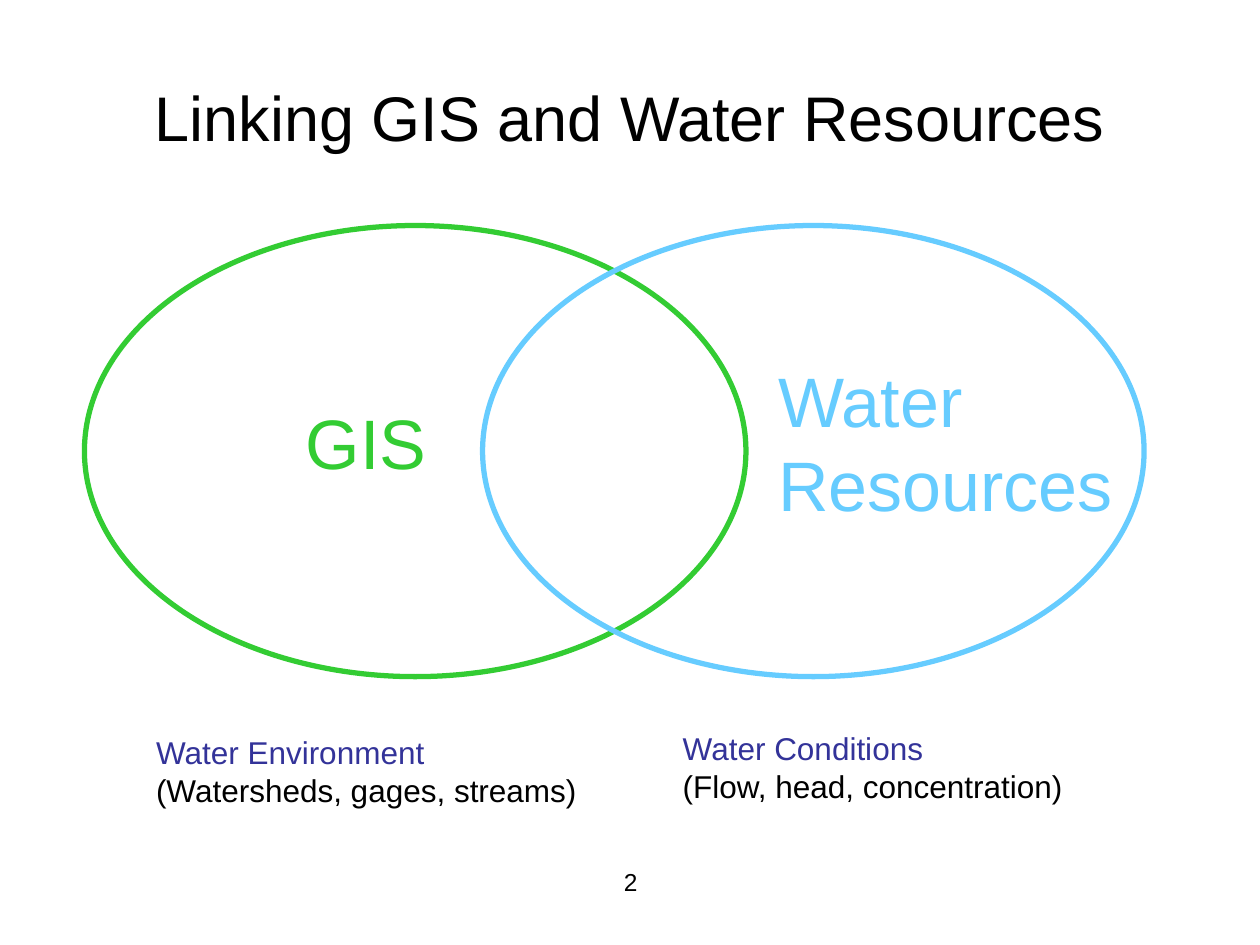
"""Build a slide that shows GIS and water resources as two overlapping ellipses."""
from pptx import Presentation
from pptx.dml.color import RGBColor
from pptx.enum.shapes import MSO_SHAPE as Shape
from pptx.enum.text import MSO_ANCHOR as Anchor, MSO_AUTO_SIZE as AutoSize, PP_ALIGN as Align
from pptx.util import Inches, Pt

BLACK = RGBColor(0x00, 0x00, 0x00)
GREEN = RGBColor(0x33, 0xCC, 0x33)
SKY = RGBColor(0x66, 0xCC, 0xFF)
INDIGO = RGBColor(0x33, 0x33, 0x99)


class SlideBuilder:
    font = "Arial"
    outline = Pt(3)

    def __init__(self, deck):
        self.page = deck.slides.add_slide(deck.slide_layouts[5])

    def add_lines(self, frame, lines, size, align=Align.LEFT):
        for index, (text, color) in enumerate(lines):
            para = frame.paragraphs[0] if index == 0 else frame.add_paragraph()
            para.alignment = align
            span = para.add_run()
            span.text = text
            for name, value in {"name": self.font, "size": Pt(size)}.items():
                setattr(span.font, name, value)
            span.font.color.rgb = color

    def title(self, text, left, top, width, height, size):
        box = self.page.shapes.title
        place = {"left": left, "top": top, "width": width, "height": height}
        for name, value in place.items():
            setattr(box, name, Inches(value))
        box.text_frame.vertical_anchor = Anchor.MIDDLE
        self.add_lines(box.text_frame, [(text, BLACK)], size, Align.CENTER)

    def ellipse(self, left, top, width, height, color):
        oval = self.page.shapes.add_shape(
            Shape.OVAL, Inches(left), Inches(top), Inches(width), Inches(height))
        oval.shadow.inherit = False
        oval.fill.background()
        oval.line.color.rgb = color
        oval.line.width = self.outline

    def text(self, lines, left, top, width, height, size,
             align=Align.LEFT, wrap=False, fit=AutoSize.SHAPE_TO_FIT_TEXT):
        box = self.page.shapes.add_textbox(
            Inches(left), Inches(top), Inches(width), Inches(height))
        for name, value in {"word_wrap": wrap, "auto_size": fit}.items():
            setattr(box.text_frame, name, value)
        self.add_lines(box.text_frame, lines, size, align)


def main():
    deck = Presentation()
    deck.slide_width, deck.slide_height = Inches(10), Inches(7.5)
    slide = SlideBuilder(deck)

    slide.title("Linking GIS and Water Resources", 0.5, 0.3, 9, 1.25, 36)
    for left, color in ((0.67, GREEN), (3.83, SKY)):
        slide.ellipse(left, 1.79, 5.25, 3.58, color)

    slide.text([("GIS", GREEN)], 2.33, 3.12, 1.16, 0.77, 40, wrap=True)
    slide.text([("Water", SKY), ("Resources", SKY)], 6.08, 2.79, 2.86, 2.1, 40)

    captions = (
        ("Water Environment", "(Watersheds, gages, streams)", 1.14, 5.77, 4.13),
        ("Water Conditions", "(Flow, head, concentration)", 5.32, 5.74, 3.81),
    )
    for heading, examples, left, top, width in captions:
        slide.text([(heading, INDIGO), (examples, BLACK)], left, top, width, 0.77, 18)

    slide.text([("2", BLACK)], 3.42, 6.83, 3.17, 0.52, 14,
               align=Align.CENTER, wrap=True, fit=AutoSize.NONE)
    deck.save("out.pptx")


if __name__ == "__main__":
    main()
